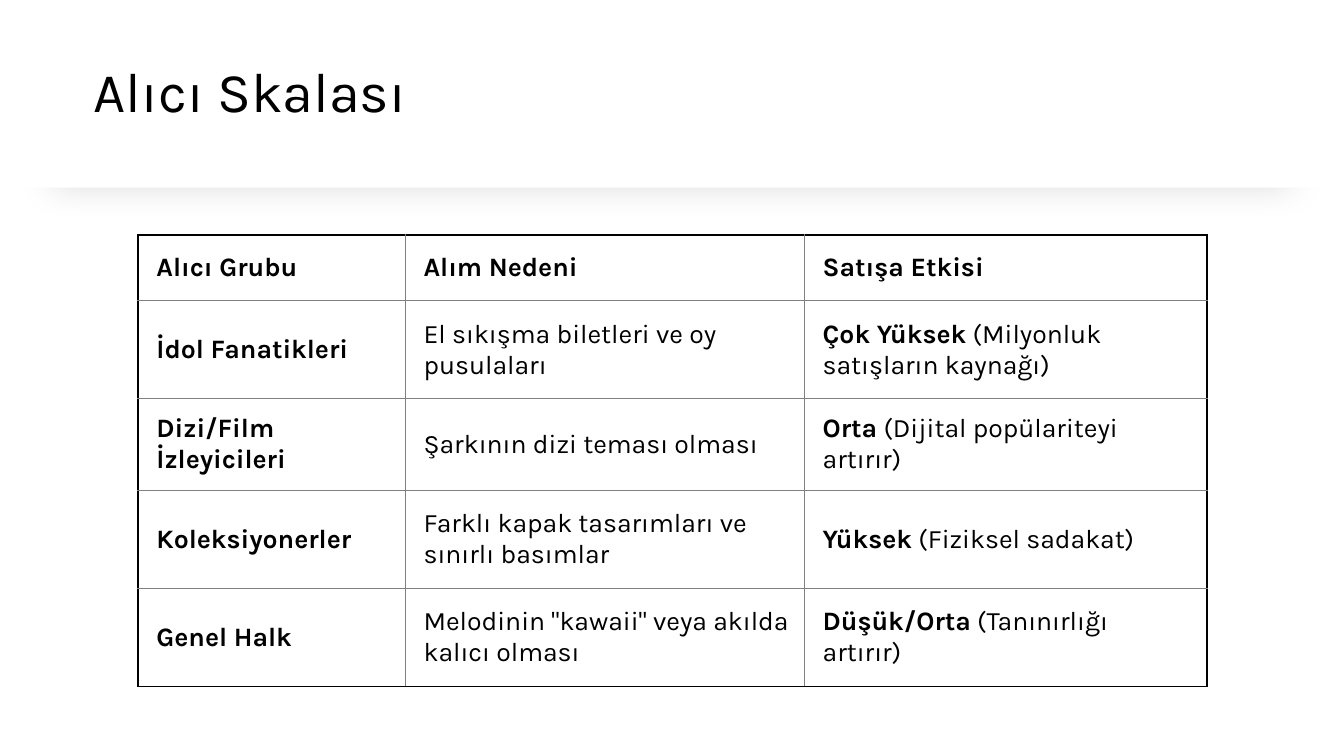
from dataclasses import dataclass

from lxml.etree import SubElement
from pptx import Presentation
from pptx.dml.color import RGBColor
from pptx.enum.shapes import MSO_SHAPE
from pptx.enum.text import MSO_ANCHOR
from pptx.oxml import parse_xml
from pptx.oxml.ns import nsdecls, qn
from pptx.util import Pt

BLACK, GRAY, WHITE = "000000", "808080", "FFFFFF"
TITLE_FORMAT = {"name": "Karla", "size": Pt(40), "bold": False}
CELL_FORMAT = {"name": "Karla", "size": Pt(19)}
CELL_LAYOUT = {
    "margin_left": Pt(13),
    "margin_top": Pt(10),
    "margin_right": Pt(10),
    "margin_bottom": Pt(10),
    "vertical_anchor": MSO_ANCHOR.MIDDLE,
}
COLUMN_WIDTHS = (190.8, 285.1, 287.3)
ROW_HEIGHTS = (46.8, 70, 46.8, 70, 70)


@dataclass
class BuyerGroup:
    name: str
    reason: str
    impact: str
    detail: str


HEADINGS = ("Alıcı Grubu", "Alım Nedeni", "Satışa Etkisi")
GROUPS = (
    BuyerGroup("İdol Fanatikleri", "El sıkışma biletleri ve oy pusulaları",
               "Çok Yüksek", " (Milyonluk satışların kaynağı)"),
    BuyerGroup("Dizi/Film İzleyicileri", "Şarkının dizi teması olması",
               "Orta", " (Dijital popülariteyi artırır)"),
    BuyerGroup("Koleksiyonerler", "Farklı kapak tasarımları ve sınırlı basımlar",
               "Yüksek", " (Fiziksel sadakat)"),
    BuyerGroup("Genel Halk", 'Melodinin "kawaii" veya akılda kalıcı olması',
               "Düşük/Orta", " (Tanınırlığı artırır)"),
)


def color(value: str) -> RGBColor:
    return RGBColor.from_string(value)


def apply(target, values: dict) -> None:
    for name, value in values.items():
        setattr(target, name, value)


def add_span(para, text: str, values: dict) -> None:
    span = para.add_run()
    span.text = text
    apply(span.font, values)
    span.font.color.rgb = color(BLACK)


def add_border(cell, index: int, side: str, outer: bool) -> None:
    properties = cell._tc.get_or_add_tcPr()
    line = SubElement(properties, qn(f"a:ln{side}"), w=str(Pt(1.5 if outer else 0.5)))
    fill = SubElement(line, qn("a:solidFill"))
    SubElement(fill, qn("a:srgbClr"), val=BLACK if outer else GRAY)
    properties.insert(index, line)


def add_header_band(page) -> None:
    band = page.shapes.add_shape(MSO_SHAPE.RECTANGLE, 0, 0, Pt(960), Pt(134))
    band.fill.solid()
    band.fill.fore_color.rgb = color(WHITE)
    band.line.fill.background()
    # Soft shadow, slightly smaller than the band
    band._element.spPr.append(parse_xml(
        f'<a:effectLst {nsdecls("a")}><a:outerShdw blurRad="{Pt(24)}" dist="{Pt(9)}" '
        'dir="5460000" sx="92000" sy="92000" algn="t" rotWithShape="0">'
        f'<a:srgbClr val="{BLACK}"><a:alpha val="14000"/></a:srgbClr>'
        '</a:outerShdw></a:effectLst>'))


def add_title(page, text: str) -> None:
    box = page.shapes.add_textbox(Pt(60), Pt(21.6), Pt(825), Pt(91.4))
    apply(box.text_frame, {"word_wrap": True, "vertical_anchor": MSO_ANCHOR.MIDDLE})
    para = box.text_frame.paragraphs[0]
    para.line_spacing = 0.9
    add_span(para, text, TITLE_FORMAT)


def add_buyer_table(page) -> None:
    # Each cell is a list of (text, bold) spans
    rows = [[[(heading, True)] for heading in HEADINGS]]
    rows += [[[(group.name, True)], [(group.reason, False)],
              [(group.impact, True), (group.detail, False)]] for group in GROUPS]
    table = page.shapes.add_table(
        len(rows), len(HEADINGS), Pt(98.8), Pt(168),
        Pt(sum(COLUMN_WIDTHS)), Pt(sum(ROW_HEIGHTS))).table
    apply(table, {"first_row": False, "horz_banding": False})
    for column, width in zip(table.columns, COLUMN_WIDTHS):
        column.width = Pt(width)
    last_row, last_column = len(rows) - 1, len(HEADINGS) - 1
    for row_index, row in enumerate(rows):
        table.rows[row_index].height = Pt(ROW_HEIGHTS[row_index])
        for column_index, spans in enumerate(row):
            cell = table.cell(row_index, column_index)
            apply(cell, CELL_LAYOUT)
            cell.fill.background()
            for text, bold in spans:
                add_span(cell.text_frame.paragraphs[0], text,
                         CELL_FORMAT | {"bold": bold})
            # Heavy black lines outside, thin gray lines inside
            outer_sides = {"L": column_index == 0, "R": column_index == last_column,
                           "T": row_index == 0, "B": row_index == last_row}
            for index, (side, outer) in enumerate(outer_sides.items()):
                add_border(cell, index, side, outer)


def main() -> None:
    deck = Presentation()
    apply(deck, {"slide_width": Pt(960), "slide_height": Pt(540)})
    page = deck.slides.add_slide(deck.slide_layouts[6])
    add_header_band(page)
    add_title(page, "Alıcı Skalası")
    add_buyer_table(page)
    deck.save("out.pptx")


if __name__ == "__main__":
    main()
